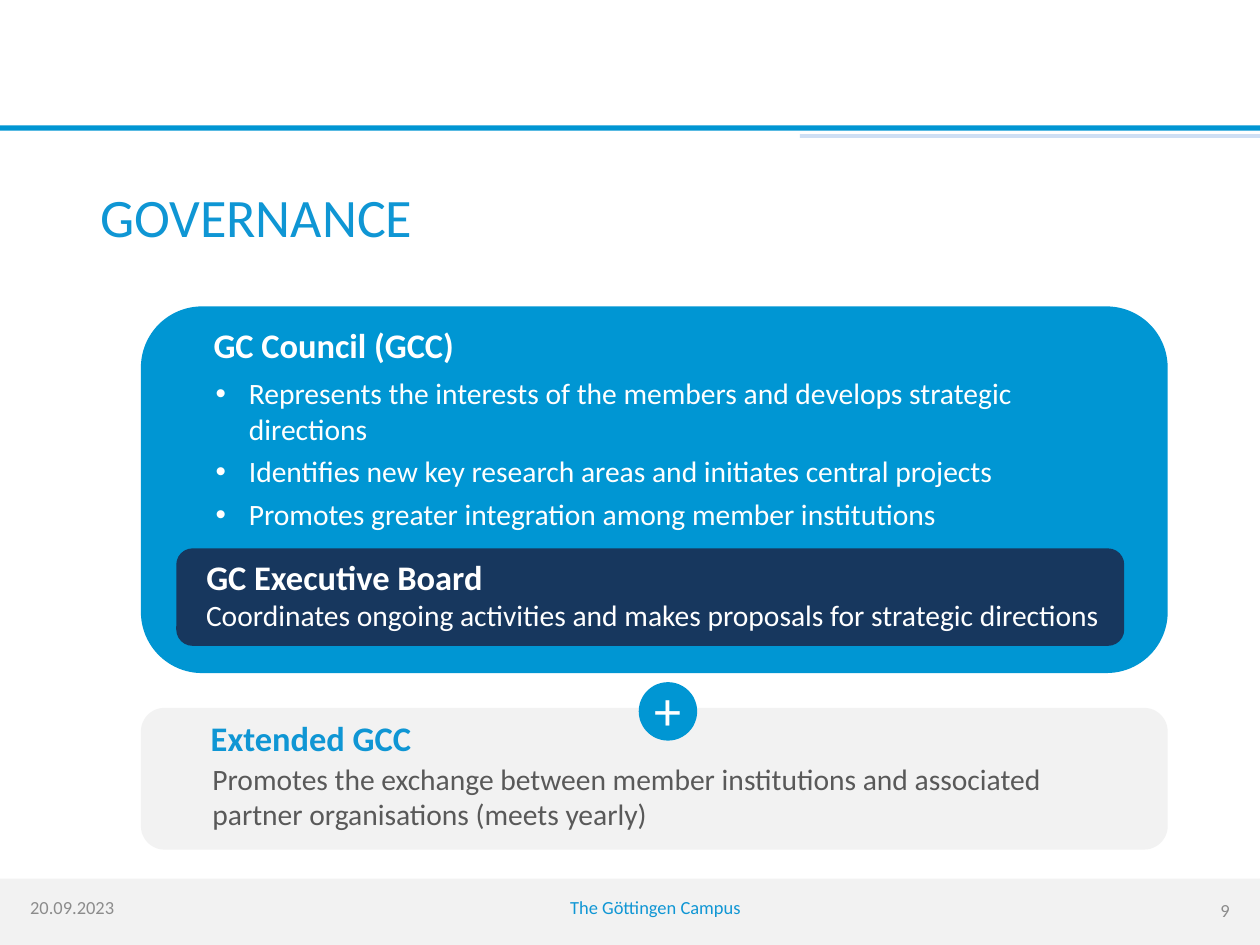
from lxml.etree import SubElement
from pptx import Presentation
from pptx.dml.color import RGBColor as Rgb
from pptx.enum.shapes import MSO_SHAPE as Kind
from pptx.enum.text import MSO_ANCHOR as Anchor, PP_ALIGN as Align
from pptx.oxml.ns import qn
from pptx.util import Pt

WIDTH, HEIGHT = 1024, 768
FONT = "Calibri"
HEAD, BODY, SMALL, LARGE = 28, 24, 15, 44
COLORS = {
    "blue": "0096D3",
    "sky": "0F96D4",
    "pale": "CFDFF4",
    "navy": "17375E",
    "light": "F2F2F2",
    "gray": "8C8C8C",
    "dark": "595959",
    "white": "FFFFFF",
}
DUTIES = [
    "Represents the interests of the members and develops strategic directions",
    "Identifies new key research areas and initiates central projects",
    "Promotes greater integration among member institutions",
]


def tint(name):
    """Return the named colour."""
    return Rgb.from_string(COLORS[name])


def add_block(slide, kind, box, fill=None):
    """Add a shape without outline, filled if a colour is named."""
    shape = slide.shapes.add_shape(kind, *map(Pt, box))
    shape.shadow.inherit = False
    shape.line.fill.background()
    if fill:
        shape.fill.solid()
        shape.fill.fore_color.rgb = tint(fill)
    else:
        shape.fill.background()
    return shape


def add_run(para, text, size, color, bold=False):
    """Add one styled run."""
    run = para.add_run()
    run.text = text
    font = run.font
    font.name, font.size, font.bold = FONT, Pt(size), bold
    font.color.rgb = tint(color)


def add_mark(para):
    """Give a paragraph a bullet with a hanging indent."""
    props = para._p.get_or_add_pPr()
    props.set("marL", str(Pt(27)))
    props.set("indent", str(-Pt(27)))
    SubElement(props, qn("a:buFont"), typeface="Arial")
    SubElement(props, qn("a:buChar"), char="•")


def add_words(slide, box, lines, size, color, bold=False):
    """Add a rounded, unfilled text frame with manual line breaks."""
    frame = add_block(slide, Kind.ROUNDED_RECTANGLE, box).text_frame
    frame.word_wrap = False
    frame.vertical_anchor = Anchor.TOP
    para = frame.paragraphs[0]
    para.alignment = Align.LEFT
    for index, line in enumerate(lines):
        if index:
            para.add_line_break()
        add_run(para, line, size, color, bold)


def add_list(slide, box, items):
    """Add a rounded, unfilled text frame with a bulleted list."""
    frame = add_block(slide, Kind.ROUNDED_RECTANGLE, box).text_frame
    frame.word_wrap = True
    frame.vertical_anchor = Anchor.TOP
    for index, item in enumerate(items):
        para = frame.add_paragraph() if index else frame.paragraphs[0]
        add_mark(para)
        para.alignment = Align.LEFT
        if index < len(items) - 1:
            para.space_after = Pt(6)
        add_run(para, item, BODY, "white")


def add_label(slide, box, text, size, color, align=Align.LEFT):
    """Add a one-line text box without margins."""
    frame = slide.shapes.add_textbox(*map(Pt, box)).text_frame
    frame.word_wrap = True
    frame.margin_left = frame.margin_right = 0
    frame.margin_top = frame.margin_bottom = 0
    para = frame.paragraphs[0]
    para.alignment = align
    add_run(para, text, size, color)


def add_frame(slide):
    """Add the bars, the title and the footer."""
    add_block(slide, Kind.RECTANGLE, (0, 714, WIDTH, 54), "light")
    add_block(slide, Kind.RECTANGLE, (650, 108.9, WIDTH - 650, 3.2), "pale")
    add_block(slide, Kind.RECTANGLE, (0, 102, WIDTH, 4.2), "blue")
    add_label(slide, (81.4, 149, 884, 53.3), "GOVERNANCE", LARGE, "sky")
    add_label(slide, (24.5, 728, 115, 22), "20.09.2023", SMALL, "gray")
    add_label(slide, (193.7, 728, 678, 22), "The Göttingen Campus", SMALL, "sky", Align.CENTER)
    add_label(slide, (931.7, 730.8, 67.7, 19.4), "9", SMALL, "gray", Align.RIGHT)


def add_council(slide):
    """Add the council card with the board inside it."""
    add_block(slide, Kind.ROUNDED_RECTANGLE, (114.5, 249, 834.5, 298), "blue")
    add_words(slide, (164.2, 257.8, 237.6, 46.8), ["GC Council (GCC)"], HEAD, "white", True)
    add_list(slide, (160.6, 293.8, 750.2, 154.8), DUTIES)
    add_block(slide, Kind.ROUNDED_RECTANGLE, (143.3, 445.7, 770.4, 79.2), "navy")
    add_words(slide, (158.4, 446.4, 244, 45.4), ["GC Executive Board"], HEAD, "white", True)
    add_words(slide, (158.4, 479.5, 746.6, 40.3),
              ["Coordinates ongoing activities and makes proposals for strategic directions"],
              BODY, "white")


def add_extended(slide):
    """Add the extended council card and its plus sign."""
    add_block(slide, Kind.ROUNDED_RECTANGLE, (114.5, 575.3, 834.5, 115.2), "light")
    add_words(slide, (162, 576.7, 182.9, 45.4), ["Extended GCC"], HEAD, "sky", True)
    add_words(slide, (162, 611.3, 706.3, 72.7),
              ["Promotes the exchange between member institutions and associated",
               "partner organisations (meets yearly)"], BODY, "dark")
    add_block(slide, Kind.OVAL, (519.1, 554.4, 47.5, 47.5), "blue")
    add_label(slide, (524.2, 549.4, 36.7, 53.3), "+", LARGE, "white", Align.CENTER)


def main():
    """Build and save the slide."""
    deck = Presentation()
    deck.slide_width, deck.slide_height = Pt(WIDTH), Pt(HEIGHT)
    slide = deck.slides.add_slide(deck.slide_layouts[6])
    add_frame(slide)
    add_council(slide)
    add_extended(slide)
    deck.save("out.pptx")


if __name__ == "__main__":
    main()
